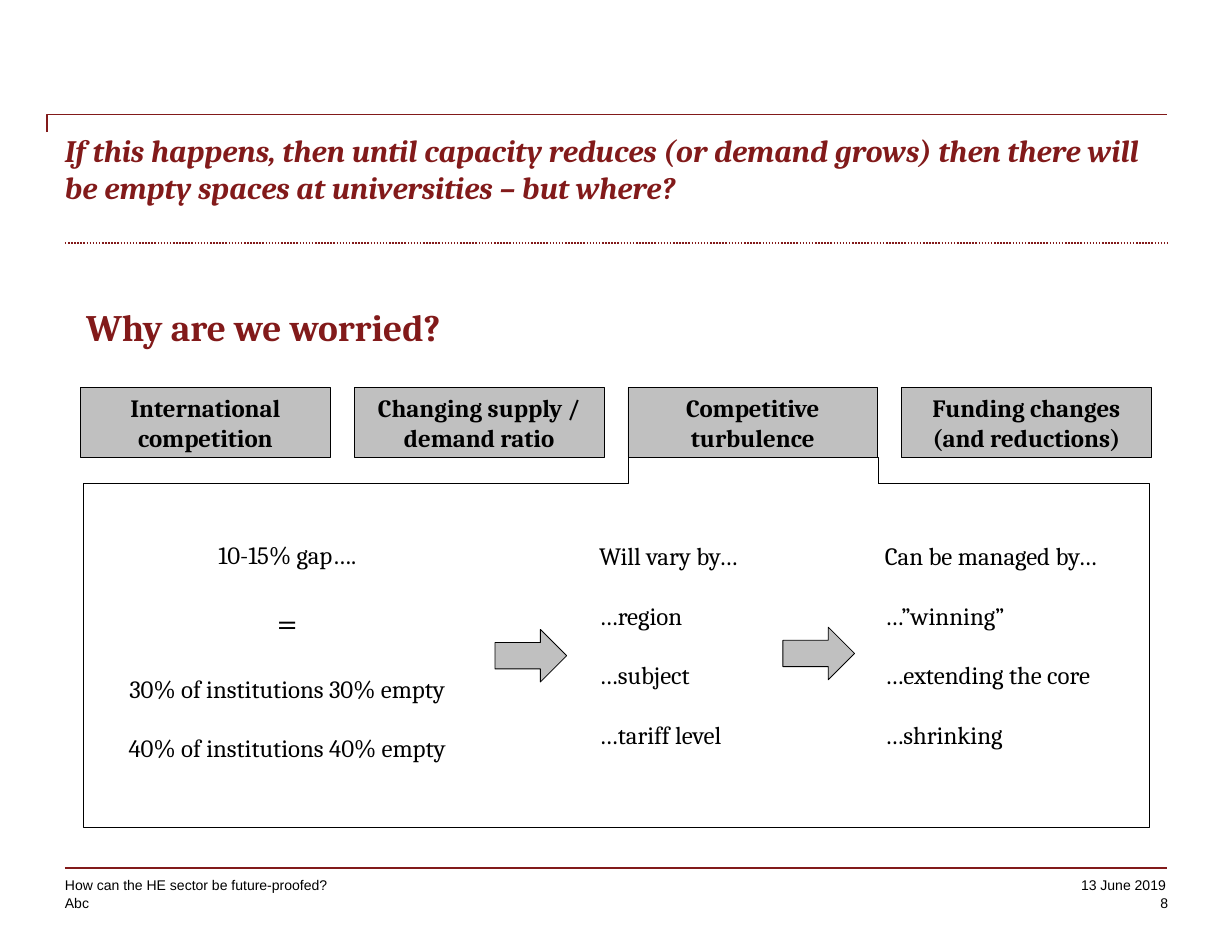
from lxml.etree import SubElement
from pptx import Presentation
from pptx.dml.color import RGBColor
from pptx.enum.dml import MSO_LINE
from pptx.enum.shapes import MSO_CONNECTOR, MSO_SHAPE
from pptx.enum.text import MSO_ANCHOR, PP_ALIGN
from pptx.oxml.ns import qn
from pptx.util import Inches, Pt

RED = RGBColor(0x82, 0x1A, 0x1A)
GREY = RGBColor(0xC0, 0xC0, 0xC0)
BLACK = RGBColor(0, 0, 0)
WHITE = RGBColor(0xFF, 0xFF, 0xFF)
SERIF, SANS = "Cambria", "Arial"


def style(par, size, font=SERIF, color=BLACK, bold=False, italic=False):
    for run in par.runs:
        face = run.font
        face.name, face.size = font, Pt(size)
        face.bold, face.italic = bold, italic
        face.color.rgb = color


def add_text(slide, box, lines, size, align=PP_ALIGN.LEFT, wrap=True, gap=0, **look):
    """Add a text box without margins; gap is the space between lines in points."""
    frame = slide.shapes.add_textbox(*map(Inches, box)).text_frame
    frame.word_wrap = wrap
    frame.margin_left = frame.margin_right = 0
    frame.margin_top = frame.margin_bottom = 0
    frame.text = "\n".join(lines)
    for i, par in enumerate(frame.paragraphs):
        par.alignment = align
        if i and gap:
            par.space_before = Pt(gap)
        style(par, size, **look)
    return frame


def add_block(slide, box, fill, line=BLACK, kind=MSO_SHAPE.RECTANGLE):
    block = slide.shapes.add_shape(kind, *map(Inches, box))
    block.shadow.inherit = False
    block.fill.solid()
    block.fill.fore_color.rgb = fill
    block.line.color.rgb = line
    block.line.width = Pt(0.5)
    return block


def add_rule(slide, left, top, width, weight, dash=None):
    rule = slide.shapes.add_connector(
        MSO_CONNECTOR.STRAIGHT, Inches(left), Inches(top), Inches(left + width), Inches(top))
    rule.line.color.rgb = RED
    rule.line.width = Pt(weight)
    if dash:
        rule.line.dash_style = dash
    SubElement(rule._element.spPr, qn("a:effectLst"))


def add_header(slide, left, top, width):
    edge, right = left - 0.16, left + width
    draw = slide.shapes.build_freeform(Inches(edge), Inches(top + 0.16))
    draw.add_line_segments(
        [(Inches(edge), Inches(top)), (Inches(right), Inches(top))], close=False)
    frame = draw.convert_to_shape()
    frame.shadow.inherit = False
    frame.fill.background()
    frame.line.color.rgb = RED
    frame.line.width = Pt(0.75)
    title = ("If this happens, then until capacity reduces (or demand grows) "
             "then there will be empty spaces at universities – but where?")
    add_text(slide, (left, top + 0.15, width, 0.92), [title], 20,
             color=RED, bold=True, italic=True)
    add_rule(slide, left, top + 1.15, width, 1, MSO_LINE.ROUND_DOT)


def add_footer(slide, left, top, width):
    right = left + width
    add_rule(slide, left, top, width, 0.75)
    topic = add_text(slide, (left, top + 0.08, 3.17, 0.15),
                     ["How can the HE sector be future-proofed?"], 9, font=SANS)
    topic.vertical_anchor = MSO_ANCHOR.BOTTOM
    add_text(slide, (right - 0.77, top + 0.08, 0.76, 0.15), ["13 June 2019"], 9,
             PP_ALIGN.RIGHT, wrap=False, font=SANS)
    firm = add_text(slide, (left, top + 0.25, 0.3, 0.12), ["Abc"], 9,
                    wrap=False, font=SANS)
    page = add_text(slide, (right - 0.34, top + 0.25, 0.35, 0.17), ["8"], 9,
                    PP_ALIGN.RIGHT, wrap=False, font=SANS)
    for frame in (firm, page):
        frame.paragraphs[0].line_spacing = Pt(10)


def add_tabs(slide, left, top, width, height, names):
    size = 2.23
    step = (width - size) / (len(names) - 1)
    for i, name in enumerate(names):
        tab = add_block(slide, (left + i * step, top, size, height), GREY)
        frame = tab.text_frame
        frame.word_wrap = True
        frame.vertical_anchor = MSO_ANCHOR.MIDDLE
        frame.text = name
        frame.paragraphs[0].alignment = PP_ALIGN.CENTER
        style(frame.paragraphs[0], 16, bold=True)


def add_panel(slide, left, top, width, height):
    """Add the panel, open at the top towards the third tab."""
    add_block(slide, (left, top, width, height), WHITE)
    add_block(slide, (left + 4.87, top - 0.24, 2.23, 0.24), WHITE)
    add_block(slide, (left + 4.88, top - 0.07, 2.21, 0.24), WHITE, WHITE)

    gap = add_text(slide, (left + 0.29, top + 0.5, 3.07, 2.02),
                   ["10-15% gap….", "=", "30% of institutions 30% empty",
                    "40% of institutions 40% empty"],
                   16, PP_ALIGN.CENTER, wrap=False, gap=19)
    style(gap.paragraphs[1], 24)

    lists = [
        (4.61, 1.37, ["Will vary by…", "…region", "…subject", "…tariff level"]),
        (7.16, 2.16, ["Can be managed by…", "…”winning”", "…extending the core",
                      "…shrinking"]),
    ]
    for x, wide, lines in lists:
        add_text(slide, (left + x, top + 0.51, wide, 2.42), lines, 16,
                 wrap=False, gap=19)
    for x, y in ((3.68, 1.3), (6.25, 1.28)):
        add_block(slide, (left + x, top + y, 0.64, 0.47), GREY,
                  kind=MSO_SHAPE.RIGHT_ARROW)


def main():
    deck = Presentation()
    deck.slide_width, deck.slide_height = Inches(11), Inches(8.5)
    slide = deck.slides.add_slide(deck.slide_layouts[6])
    add_header(slide, 0.58, 1.02, 9.84)
    add_footer(slide, 0.58, 7.75, 9.84)
    head = add_text(slide, (0.77, 2.52, 8.7, 0.8), ["Why are we worried?"], 24,
                    color=RED, bold=True)
    head.paragraphs[0].line_spacing = 1.5
    add_panel(slide, 0.74, 4.32, 9.52, 3.07)
    add_tabs(slide, 0.72, 3.46, 9.56, 0.62,
             ["International competition", "Changing supply / demand ratio",
              "Competitive turbulence", "Funding changes (and reductions)"])
    deck.save("out.pptx")


if __name__ == "__main__":
    main()
